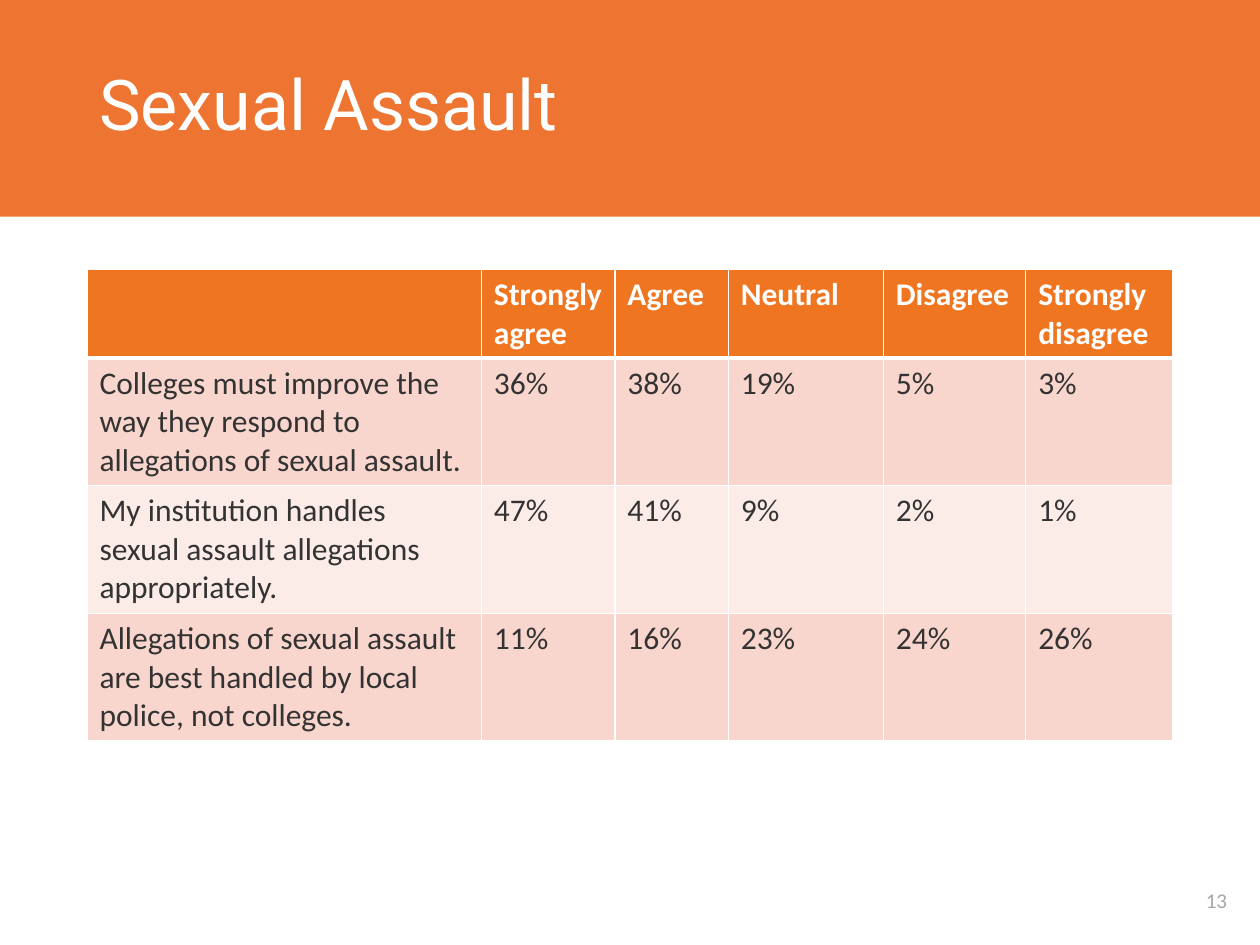
from lxml import etree
from pptx import Presentation
from pptx.dml.color import RGBColor
from pptx.enum import shapes, text
from pptx.oxml import ns
from pptx.util import Pt

WHITE = RGBColor(0xFF, 0xFF, 0xFF)
BANNER = RGBColor(0xEE, 0x75, 0x31)
HEADER = RGBColor(0xEF, 0x75, 0x21)
BAND_DARK = RGBColor(0xF9, 0xD6, 0xCD)
BAND_LIGHT = RGBColor(0xFC, 0xEC, 0xE8)
INK = RGBColor(0x33, 0x33, 0x33)
GREY = RGBColor(0xA6, 0xA6, 0xA6)

ROWS = [
    ["", "Strongly agree", "Agree", "Neutral", "Disagree", "Strongly disagree"],
    ["Colleges must improve the way they respond to allegations of sexual assault.",
     "36%", "38%", "19%", "5%", "3%"],
    ["My institution handles sexual assault allegations appropriately.",
     "47%", "41%", "9%", "2%", "1%"],
    ["Allegations of sexual assault are best handled by local police, not colleges.",
     "11%", "16%", "23%", "24%", "26%"],
]
COLUMN_WIDTHS = [225.4, 76.3, 64.8, 88.6, 81.4, 84.2]
ROW_HEIGHTS = [50.4, 73, 73, 73]


def add_label(page, bounds, words, font_name, size, color):
    """Add a text box with one vertically centred line and return its paragraph."""
    box = page.shapes.add_textbox(*map(Pt, bounds))
    frame = box.text_frame
    frame.word_wrap = True
    frame.vertical_anchor = text.MSO_ANCHOR.MIDDLE
    frame.text = words
    para = frame.paragraphs[0]
    para.font.name = font_name
    para.font.size = Pt(size)
    para.font.color.rgb = color
    return para


def add_border(cell, side, width):
    """Draw one white edge; side is L, R, T or B. Call before filling the cell."""
    properties = cell._tc.get_or_add_tcPr()
    line = etree.SubElement(properties, ns.qn(f"a:ln{side}"), w=str(Pt(width)))
    fill = etree.SubElement(line, ns.qn("a:solidFill"))
    etree.SubElement(fill, ns.qn("a:srgbClr"), val=str(WHITE))


deck = Presentation()
deck.slide_width, deck.slide_height = Pt(720), Pt(540)
page = deck.slides.add_slide(deck.slide_layouts[6])

banner = page.shapes.add_shape(
    shapes.MSO_SHAPE.RECTANGLE, Pt(-0.7), Pt(0), Pt(721.4), Pt(123.8))
banner.shadow.inherit = False
banner.fill.solid()
banner.fill.fore_color.rgb = BANNER
banner.line.fill.background()

number = add_label(page, (670.3, 500.4, 49.7, 28.1), "13", "Calibri", 12, GREY)
number.alignment = text.PP_ALIGN.CENTER
title = add_label(page, (49.7, 0, 620.6, 123.1), "Sexual Assault", "Roboto", 40, WHITE)
title.line_spacing = 0.9

table = page.shapes.add_table(
    len(ROWS), len(COLUMN_WIDTHS), Pt(49.7), Pt(154.1),
    Pt(sum(COLUMN_WIDTHS)), Pt(sum(ROW_HEIGHTS))).table
for column, width in zip(table.columns, COLUMN_WIDTHS):
    column.width = Pt(width)

for r, (answers, height) in enumerate(zip(ROWS, ROW_HEIGHTS)):
    table.rows[r].height = Pt(height)
    is_header = r == 0
    band = HEADER if is_header else BAND_DARK if r % 2 else BAND_LIGHT
    edges = {"L": 1, "R": 1, "T": 3 if r == 1 else 1, "B": 3 if is_header else 1}
    for c, words in enumerate(answers):
        cell = table.cell(r, c)
        for side, width in edges.items():
            add_border(cell, side, width)
        cell.fill.solid()
        cell.fill.fore_color.rgb = band
        cell.text = words
        font = cell.text_frame.paragraphs[0].font
        font.name = "Calibri"
        font.size = Pt(18)
        font.bold = is_header
        font.color.rgb = WHITE if is_header else INK

deck.save("out.pptx")
